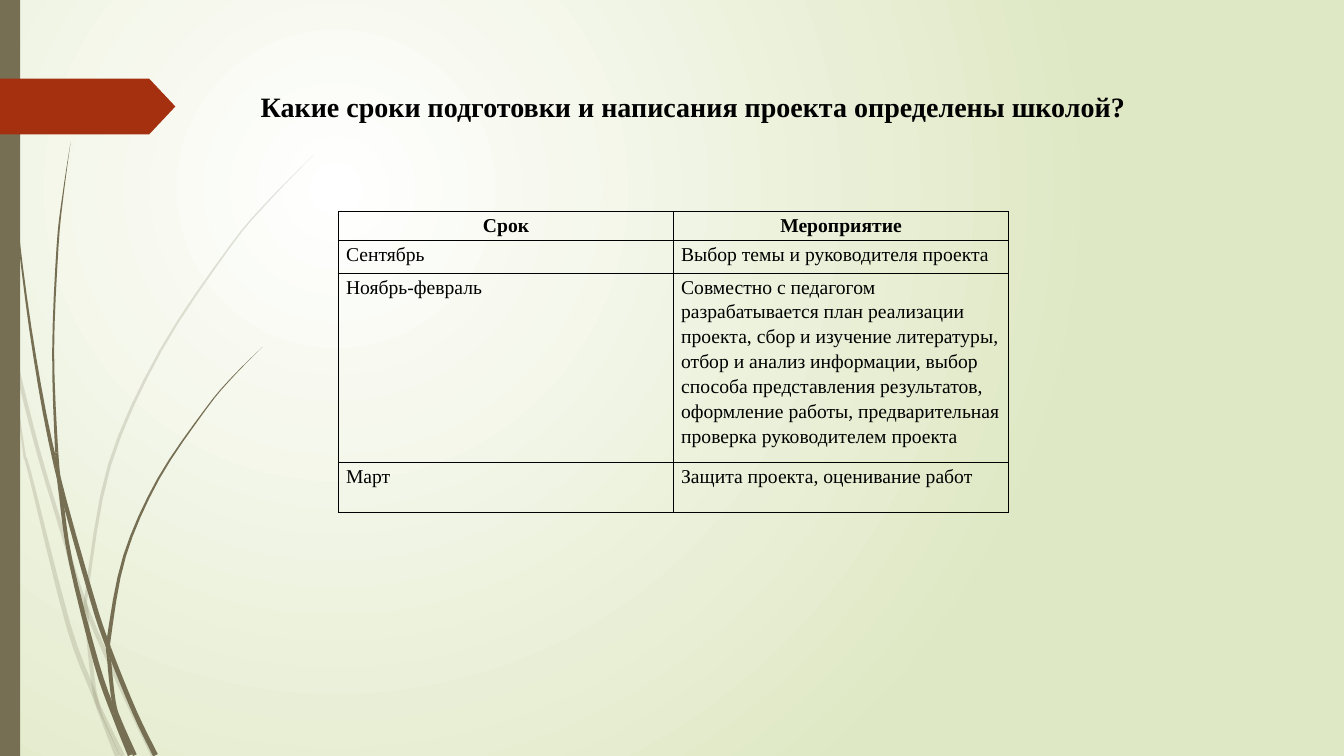
import math

from lxml import etree
from pptx import Presentation
from pptx.dml.color import RGBColor
from pptx.enum.shapes import MSO_SHAPE
from pptx.enum.text import PP_ALIGN
from pptx.oxml.ns import qn
from pptx.util import Cm, Pt

RECTANGLE, PENTAGON = MSO_SHAPE.RECTANGLE, MSO_SHAPE.PENTAGON
LEFT, CENTER = PP_ALIGN.LEFT, PP_ALIGN.CENTER
COLORS = {"olive": "766F54", "rust": "A53010", "black": "000000",
          "glow": "FFFFFF", "edge": "DFE8C4"}
FONT = "Times New Roman"
SLIDE_WIDTH, SLIDE_HEIGHT = 33.87, 19.05
CURVE_STEPS = 4

TITLE = "Какие сроки подготовки и написания проекта определены школой?"
SCHEDULE = [
    ("Срок", "Мероприятие"),
    ("Сентябрь", "Выбор темы и руководителя проекта"),
    ("Ноябрь-февраль",
     "Совместно с педагогом разрабатывается план реализации проекта, "
     "сбор и изучение литературы, отбор и анализ информации, выбор способа "
     "представления результатов, оформление работы, предварительная проверка "
     "руководителем проекта"),
    ("Март", "Защита проекта, оценивание работ"),
]
ROW_HEIGHTS = [0.74, 0.82, 1.52, 1.26]

PALE_BLADES = [
    ([2, 5], [(0, 7.35, 0.1), (0.28, 8.7, 0.1), (0.4, 9.15, 0.1), (0.93, 11.25, 0.1),
              (1.52, 13.23, 0.1), (2.18, 15.34, 0.11), (3.18, 17.6, 0.11),
              (3.87, 19.05, 0.12)]),
    ([5], [(0.28, 8.89, 0), (0.6, 11.35, 0.06), (0.75, 11.92, 0.08), (1.72, 15.75, 0.12),
           (2.35, 17.45, 0.12), (2.57, 18.1, 0.08), (2.96, 19.05, 0.13)]),
    ([5, 6, 9], [(7.92, 3.89, 0), (6.81, 5.02, 0.03), (5.8, 6.21, 0.04), (4.04, 8.85, 0.06),
                 (2.76, 11.72, 0.08), (2.2, 14.83, 0.08), (2.18, 15.4, 0.1),
                 (2.26, 16.4, 0.1), (2.4, 17.5, 0.1), (2.62, 18.08, 0.1),
                 (3.09, 19.05, 0.12)]),
]
DARK_BLADES = [
    ([5, 7], [(0.09, 0, 0.02), (0.12, 1.22, 0.02), (0.19, 2.78, 0.03), (0.46, 5.91, 0.04),
              (0.88, 9.02, 0.07), (1.42, 11.8, 0.1), (2.3, 15.01, 0.12),
              (2.74, 16.33, 0.12), (3.4, 17.96, 0.12), (3.92, 19.03, 0.13)]),
    ([4, 5, 8], [(1.78, 3.58, 0), (1.59, 4.9, 0.03), (1.45, 6.22, 0.05), (1.34, 8.86, 0.05),
                 (1.43, 11.4, 0.08), (1.54, 12.5, 0.1), (1.78, 14.14, 0.1),
                 (2.43, 16.71, 0.13), (2.87, 17.98, 0.13), (3.28, 19.03, 0.12)]),
    ([5, 6, 8], [(6.62, 8.74, 0), (5.87, 9.49, 0.02), (5.19, 10.3, 0.03),
                 (3.99, 12.07, 0.05), (3.14, 14.01, 0.07), (2.75, 16.05, 0.1),
                 (2.75, 16.6, 0.1), (2.87, 17.7, 0.1), (3.03, 18.2, 0.1),
                 (3.4, 19.03, 0.1)]),
]


def color(name):
    """Return the named colour."""
    return RGBColor.from_string(COLORS[name])


def paint(shape, name, opacity=None):
    """Fill a shape with a plain colour, without line or shadow."""
    shape.shadow.inherit = False
    shape.fill.solid()
    shape.fill.fore_color.rgb = color(name)
    shape.line.fill.background()
    if opacity:
        solid = shape._element.spPr.find(qn("a:solidFill"))
        etree.SubElement(solid[0], qn("a:alpha"), val=str(opacity * 1000))


def write(text_frame, text, size=14, bold=False, align=LEFT, spacing=1.0, before=0):
    """Put one formatted paragraph into a text frame."""
    text_frame.word_wrap = True
    paragraph = text_frame.paragraphs[0]
    paragraph.alignment = align
    paragraph.line_spacing = spacing
    paragraph.space_before = Pt(before)
    run = paragraph.add_run()
    run.text = text
    run.font.name = FONT
    run.font.size = Pt(size)
    run.font.bold = bold
    run.font.color.rgb = color("black")


def smooth(knots):
    """Sample a smooth curve through the knots."""
    padded = [knots[0], *knots, knots[-1]]
    samples = []
    for a, b, c, d in zip(padded, padded[1:], padded[2:], padded[3:]):
        for step in range(CURVE_STEPS):
            t = step / CURVE_STEPS
            samples.append(tuple(
                q + t * (r - p) / 2 + t * t * (2 * p - 5 * q + 4 * r - s) / 2
                + t ** 3 * (3 * q - p - 3 * r + s) / 2
                for p, q, r, s in zip(a, b, c, d)))
    return samples + [knots[-1]]


def draw_blade(slide, cuts, knots, opacity=None):
    """Draw a grass blade along knots of x, y and width, in pieces split at the cuts."""
    samples = smooth(knots)
    right, left = [], []
    for index, (x, y, width) in enumerate(samples):
        start = samples[max(index - 1, 0)]
        end = samples[min(index + 1, len(samples) - 1)]
        run, rise = end[0] - start[0], end[1] - start[1]
        half = width / 2 / math.hypot(run, rise)
        right.append((Cm(x + rise * half), Cm(y - run * half)))
        left.append((Cm(x - rise * half), Cm(y + run * half)))
    ends = [cut * CURVE_STEPS for cut in (0, *cuts, len(knots) - 1)]
    for first, last in zip(ends, ends[1:]):
        outline = right[first:last + 1] + left[first:last + 1][::-1]
        builder = slide.shapes.build_freeform(*outline[0])
        builder.add_line_segments(outline[1:])
        paint(builder.convert_to_shape(), "olive", opacity)


def draw_background(slide):
    """Set the radial glow behind the slide."""
    fill = slide.background.fill
    fill.gradient()
    for stop, name in zip(fill.gradient_stops, ("glow", "edge")):
        stop.color.rgb = color(name)
    gradient = slide._element.find(".//" + qn("a:gradFill"))
    gradient.remove(gradient.find(qn("a:lin")))
    circle = etree.SubElement(gradient, qn("a:path"), path="circle")
    etree.SubElement(circle, qn("a:fillToRect"), l="50000", t="50000", r="100000", b="100000")


def draw_decoration(slide, height):
    """Draw the grass, the side bar and the arrow tab."""
    for cuts, knots in PALE_BLADES:
        draw_blade(slide, cuts, knots, opacity=20)
    for cuts, knots in DARK_BLADES:
        draw_blade(slide, cuts, knots)
    bar = slide.shapes.add_shape(RECTANGLE, 0, 0, Cm(0.51), Cm(height))
    paint(bar, "olive")
    tab = slide.shapes.add_shape(PENTAGON, 0, Cm(1.98), Cm(4.42), Cm(1.41))
    tab.adjustments[0] = 0.47
    paint(tab, "rust")


def draw_title(slide, left, top, width, height):
    """Write the question in its box."""
    box = slide.shapes.add_textbox(Cm(left), Cm(top), Cm(width), Cm(height))
    write(box.text_frame, TITLE, size=20, bold=True, before=10)


def border_cell(cell):
    """Give a cell thin black borders and no fill."""
    properties = cell._tc.get_or_add_tcPr()
    for side in ("lnL", "lnR", "lnT", "lnB"):
        line = etree.SubElement(properties, qn("a:" + side), w=str(Pt(1)))
        solid = etree.SubElement(line, qn("a:solidFill"))
        etree.SubElement(solid, qn("a:srgbClr"), val=COLORS["black"])
    cell.fill.background()


def draw_schedule(slide, left, top, width):
    """Draw the table of dates and activities."""
    frame = slide.shapes.add_table(len(SCHEDULE), 2, Cm(left), Cm(top),
                                   Cm(width), Cm(sum(ROW_HEIGHTS)))
    table = frame.table
    table.first_row = table.horz_banding = False
    for column in table.columns:
        column.width = Cm(width / 2)
    for row_index, texts in enumerate(SCHEDULE):
        table.rows[row_index].height = Cm(ROW_HEIGHTS[row_index])
        header = row_index == 0
        for column_index, text in enumerate(texts):
            cell = table.cell(row_index, column_index)
            cell.margin_left = cell.margin_right = Cm(0.19)
            cell.margin_top = cell.margin_bottom = 0
            border_cell(cell)
            write(cell.text_frame, text, bold=header, spacing=1.15,
                  align=CENTER if header else LEFT)


def main():
    """Build and save the slide."""
    presentation = Presentation()
    presentation.slide_width = Cm(SLIDE_WIDTH)
    presentation.slide_height = Cm(SLIDE_HEIGHT)
    slide = presentation.slides.add_slide(presentation.slide_layouts[6])
    draw_background(slide)
    draw_decoration(slide, SLIDE_HEIGHT)
    draw_title(slide, 6.32, 2.12, 24.77, 10.49)
    draw_schedule(slide, 8.53, 5.33, 16.89)
    presentation.save("out.pptx")


if __name__ == "__main__":
    main()
